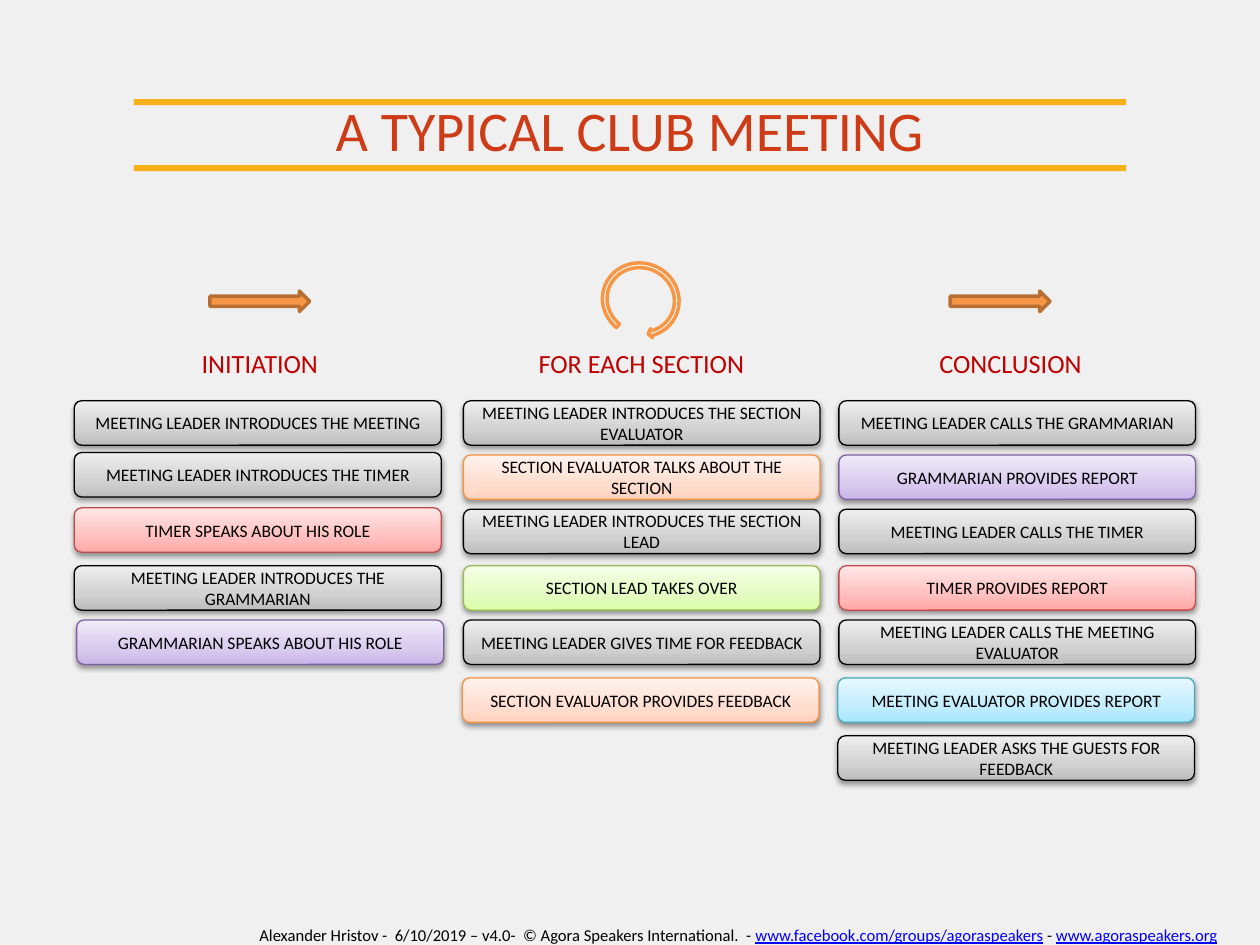
from lxml import etree
from pptx import Presentation
from pptx import util as u
from pptx.dml.color import RGBColor
from pptx.enum import shapes, text
from pptx.oxml import ns

HUES = {
    "back": "F0F0F0", "bar": "F8AF18", "title": "CE3C17", "head": "C00000",
    "text": "000000", "link": "0000FF", "arrow": "F79646", "edge": "B76F34",
    "white": "FFFFFF",
}
TONES = {
    "gray": ("000000", "BDBDBD", "D1D1D1", "EEEEEE"),
    "red": ("BF4C48", "FFA6A5", "FFC0BF", "FFE7E7"),
    "violet": ("7D60A0", "C9B5E8", "D8CBEE", "F0EAF9"),
    "peach": ("F69240", "FFD2BD", "FFDED0", "FFF2ED"),
    "green": ("98B955", "DAFDA7", "E4FCC2", "F5FFE7"),
    "blue": ("46AAC5", "A7E6FF", "C1EDFF", "E7F8FF"),
}
ROWS = (229, 260, 291, 323.3, 354.3, 387.4, 420.5)
COLS = (
    ("INITIATION", 44, 42.4, 209.8, (
        ("gray", "MEETING LEADER INTRODUCES THE MEETING"),
        ("gray", "MEETING LEADER INTRODUCES THE TIMER", 0, -1.4),
        ("red", "TIMER SPEAKS ABOUT HIS ROLE", 0, -0.8),
        ("gray", "MEETING LEADER INTRODUCES THE GRAMMARIAN"),
        ("violet", "GRAMMARIAN SPEAKS ABOUT HIS ROLE", 1.4, 0),
    )),
    ("FOR EACH SECTION", 262, 264.8, 203.8, (
        ("gray", "MEETING LEADER INTRODUCES THE SECTION EVALUATOR"),
        ("peach", "SECTION EVALUATOR TALKS ABOUT THE SECTION"),
        ("gray", "MEETING LEADER INTRODUCES THE SECTION LEAD"),
        ("green", "SECTION LEAD TAKES OVER"),
        ("gray", "MEETING LEADER GIVES TIME FOR FEEDBACK"),
        ("peach", "SECTION EVALUATOR PROVIDES FEEDBACK", -0.6, 0),
    )),
    ("CONCLUSION", 473, 479.4, 203.8, (
        ("gray", "MEETING LEADER CALLS THE GRAMMARIAN"),
        ("violet", "GRAMMARIAN PROVIDES REPORT"),
        ("gray", "MEETING LEADER CALLS THE TIMER"),
        ("red", "TIMER PROVIDES REPORT"),
        ("gray", "MEETING LEADER CALLS THE MEETING EVALUATOR"),
        ("blue", "MEETING EVALUATOR PROVIDES REPORT", -0.6, 0),
        ("gray", "MEETING LEADER ASKS THE GUESTS FOR FEEDBACK", -0.6, 0),
    )),
)
FOOT = (
    ("Alexander Hristov -  6/10/2019 – v4.0-  © Agora Speakers International.  - ", "text"),
    ("www.facebook.com/groups/agoraspeakers", "link"),
    (" - ", "text"),
    ("www.agoraspeakers.org", "link"),
)


def tint(code):
    """Turn a hex string into a colour."""
    return RGBColor.from_string(code)


def node(top, tag, **attrs):
    """Add a drawing element below another."""
    return etree.SubElement(top, ns.qn(f"a:{tag}"), attrs)


class Deck:
    """Hold the style and the current slide."""

    font = "Calibri"

    def __init__(self):
        self.show = Presentation()
        self.show.slide_width, self.show.slide_height = u.Pt(720), u.Pt(540)
        self.slide = self.show.slides.add_slide(self.show.slide_layouts[6])
        fill = self.slide.background.fill
        fill.solid()
        fill.fore_color.rgb = tint(HUES["back"])

    def words(self, frame, runs, size):
        """Put one centred paragraph of coloured runs in a frame."""
        frame.word_wrap = True
        para = frame.paragraphs[0]
        para.alignment = text.PP_ALIGN.CENTER
        para.font.name, para.font.size = self.font, u.Pt(size)
        if len(runs) == 1:
            para.font.color.rgb = tint(HUES[runs[0][1]])
        for part, hue in runs:
            run = para.add_run()
            run.text = part
            if len(runs) > 1:
                run.font.color.rgb = tint(HUES[hue])
                run.font.underline = hue == "link"

    def label(self, box, runs, size):
        """Add a text box."""
        area = self.slide.shapes.add_textbox(*map(u.Pt, box))
        self.words(area.text_frame, runs, size)

    def shape(self, kind, box, fill, line=None, width=2):
        """Add a plain preset shape."""
        item = self.slide.shapes.add_shape(kind, *map(u.Pt, box))
        item.shadow.inherit = False
        item.fill.solid()
        item.fill.fore_color.rgb = tint(fill)
        if line:
            item.line.color.rgb = tint(line)
            item.line.width = u.Pt(width)
        else:
            item.line.fill.background()
        return item

    def step(self, box, tone, title):
        """Add a shaded, shadowed step of the meeting."""
        edge, *stops = TONES[tone]
        item = self.shape(shapes.MSO_SHAPE.ROUNDED_RECTANGLE, box, stops[0], edge, 0.75)
        item.fill.gradient()
        item.fill.gradient_angle = 90
        props = item._element.spPr
        ramp = next(props.iter(ns.qn("a:gsLst")))
        for stop in list(ramp):
            ramp.remove(stop)
        for pos, code in zip((0, 35, 100), stops):
            node(node(ramp, "gs", pos=str(pos * 1000)), "srgbClr", val=code)
        shade = node(props.find(ns.qn("a:effectLst")), "outerShdw",
                     blurRad=str(u.Pt(3.1)), dist=str(u.Pt(1.6)),
                     dir="5400000", rotWithShape="0")
        node(node(shade, "srgbClr", val=HUES["text"]), "alpha", val="38000")
        item.text_frame.vertical_anchor = text.MSO_ANCHOR.MIDDLE
        self.words(item.text_frame, [(title, "text")], 10)

    def loop(self, box, turn, bends):
        """Add a turned circular arrow."""
        item = self.shape(shapes.MSO_SHAPE.CIRCULAR_ARROW, box,
                          HUES["white"], HUES["arrow"])
        item.rotation = turn
        for spot, bend in enumerate(bends):
            item.adjustments[spot] = bend


def main():
    """Build the slide."""
    deck = Deck()
    for top in (56.7, 94.4):
        deck.shape(shapes.MSO_SHAPE.RECTANGLE, (76.5, top, 567, 3.4), HUES["bar"])
    deck.label((0.5, 51, 719, 43), [("A TYPICAL CLUB MEETING", "title")], 32)
    for head, start, left, width, steps in COLS:
        deck.label((start, 195, 209, 25), [(head, "head")], 15)
        for top, (tone, title, *shift) in zip(ROWS, steps):
            dx, dy = shift or (0, 0)
            deck.step((left + dx, top + dy, width, 25.4), tone, title)
    for left in (120, 543):
        deck.shape(shapes.MSO_SHAPE.RIGHT_ARROW, (left, 166.3, 57, 11.7),
                   HUES["arrow"], HUES["edge"])
    deck.loop((342.7, 149, 46.8, 44.6), 201.8, (0.06, 3.31, 138.15, 173.62, 0.06))
    deck.label((126, 525, 592, 15), FOOT, 9.5)
    deck.show.save("out.pptx")


if __name__ == "__main__":
    main()
